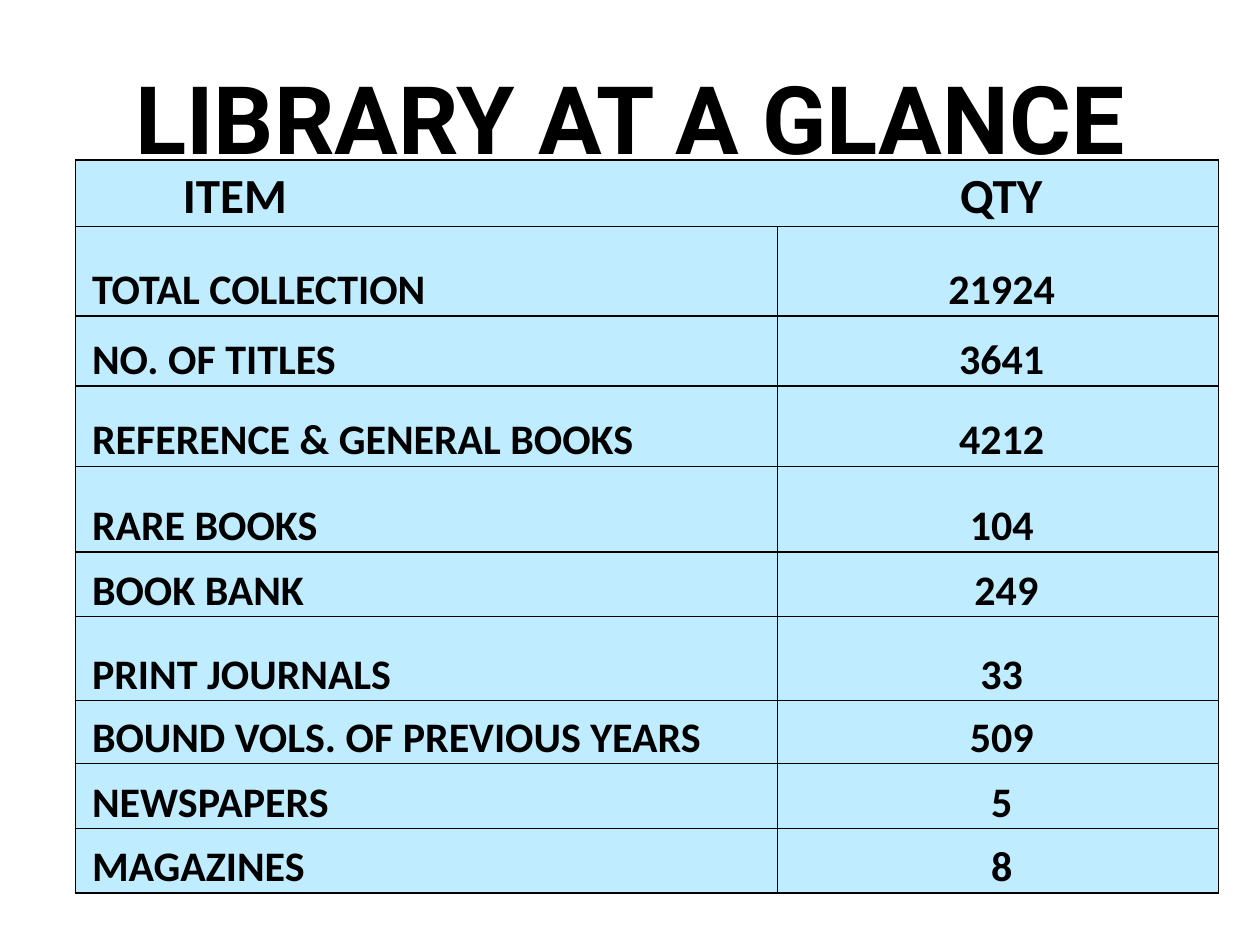
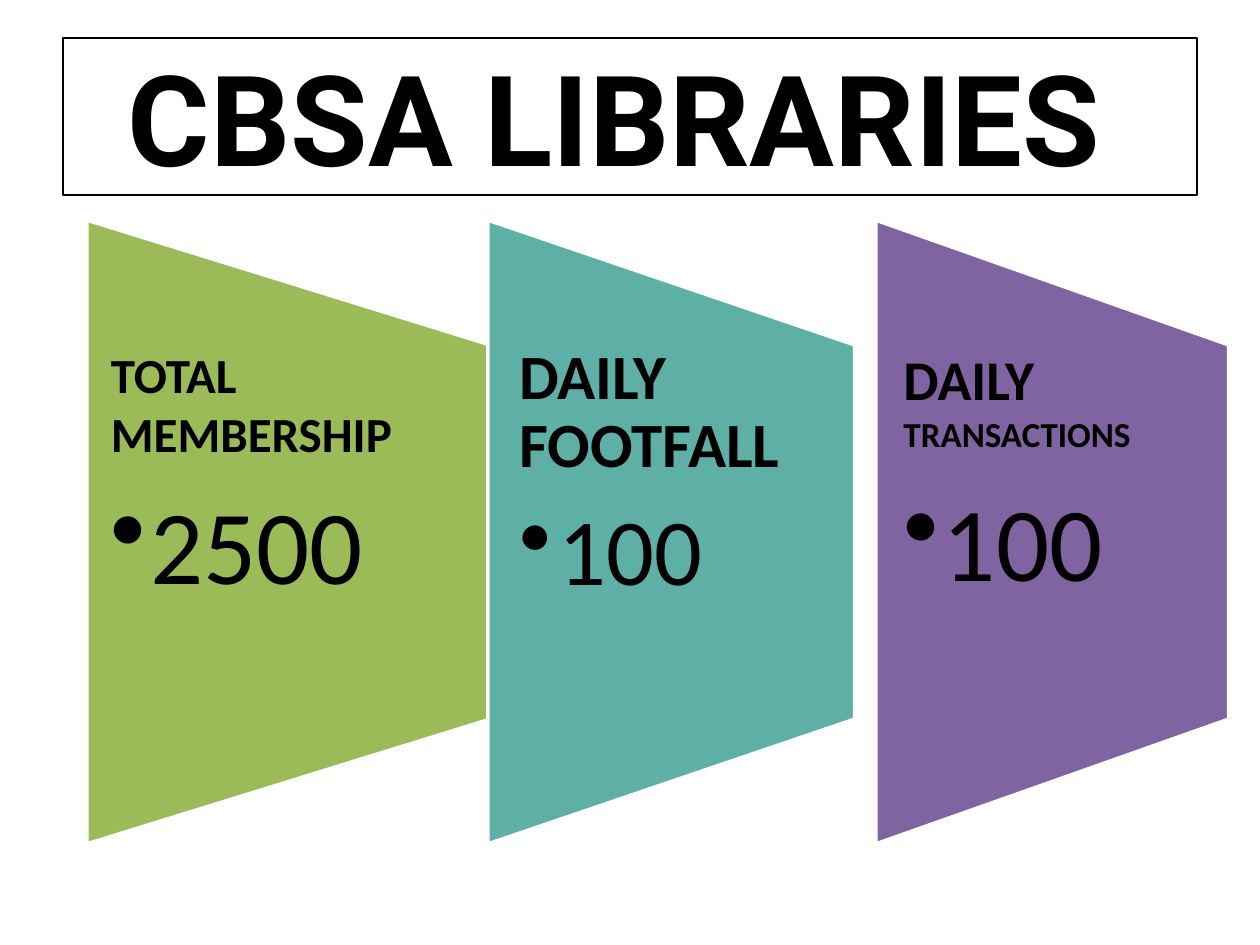
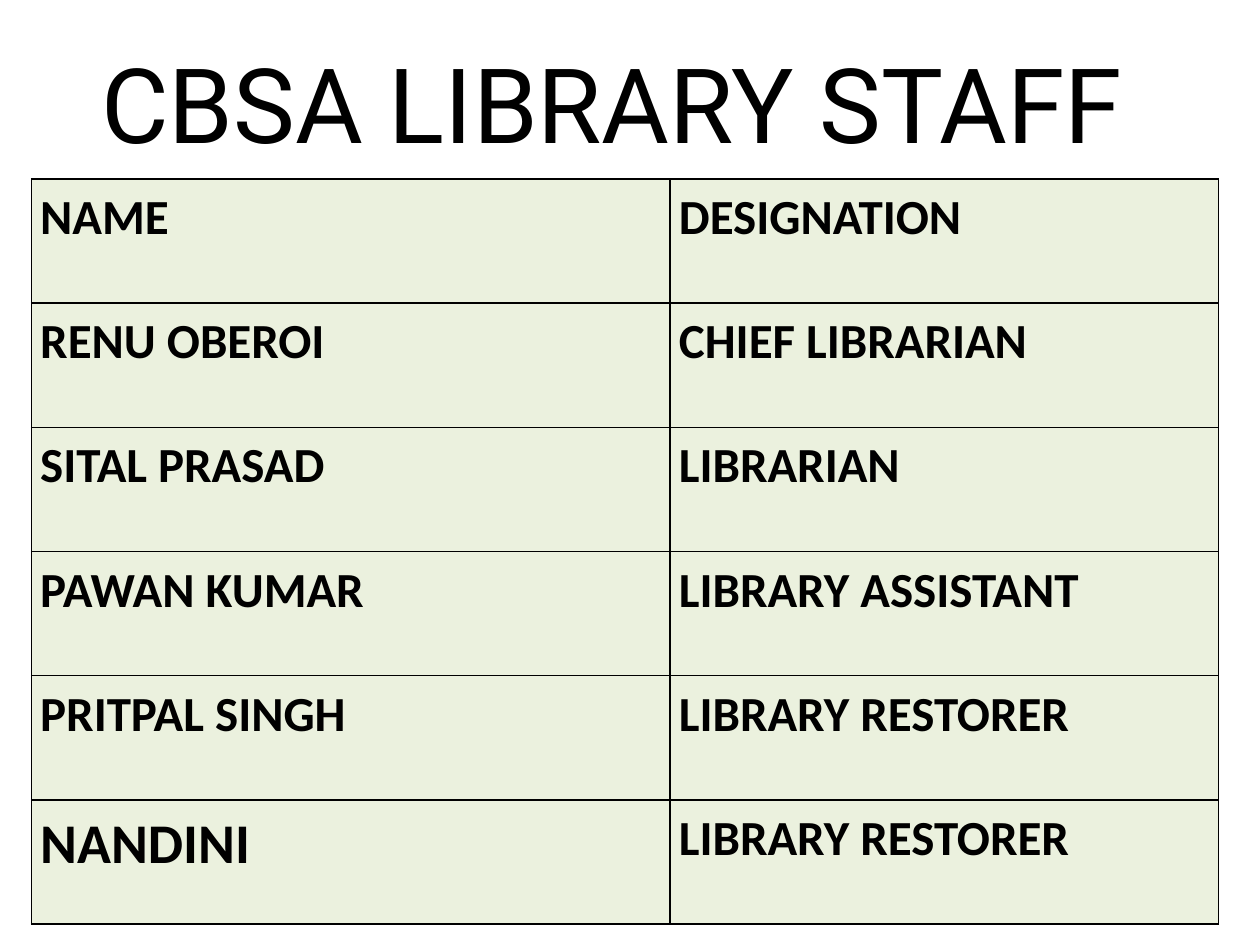
"""Build three slides on the library: holdings, usage and staff."""
from dataclasses import dataclass

from lxml import etree
from pptx import Presentation
from pptx.dml.color import RGBColor
from pptx.enum.shapes import MSO_SHAPE
from pptx.enum.text import MSO_ANCHOR, MSO_AUTO_SIZE, PP_ALIGN
from pptx.oxml.ns import qn
from pptx.util import Pt

TRAPEZOID = MSO_SHAPE.FLOWCHART_MANUAL_OPERATION
TOP, MIDDLE, BOTTOM = MSO_ANCHOR.TOP, MSO_ANCHOR.MIDDLE, MSO_ANCHOR.BOTTOM
LEFT, CENTER = PP_ALIGN.LEFT, PP_ALIGN.CENTER
NO_FIT = MSO_AUTO_SIZE.NONE
TITLE_ONLY = 5


@dataclass(frozen=True)
class Theme:
    """Colours, fonts and type sizes of the deck."""
    title_font: str = "Roboto"
    body_font: str = "Calibri"
    ink: str = "000000"
    paper: str = "FFFFFF"
    sky: str = "C0ECFF"
    sage: str = "EBF1DE"
    green: str = "9BBB59"
    teal: str = "5EAFA6"
    purple: str = "8064A2"
    header: float = 28
    item: float = 24
    emphasis: float = 32


THEME = Theme()

TITLES = {
    "holdings": dict(text="LIBRARY AT A GLANCE", at=(36, 21.6), size=54, bold=True),
    "usage": dict(text="CBSA LIBRARIES ", at=(36, 21.6), size=72, bold=True),
    "staff": dict(text="CBSA LIBRARY STAFF ", at=(33, 13.5), size=59.4, bold=False),
}
TITLE_SIZE = (648, 90)

HOLDINGS_HEADER = "\tITEM\tQTY"
HEADER_TABS = (52, 496)
HOLDINGS = [
    ("TOTAL COLLECTION", "21924"),
    ("NO. OF TITLES", "3641"),
    ("REFERENCE & GENERAL BOOKS", "4212"),
    ("RARE BOOKS", "104"),
    ("BOOK BANK", " 249"),
    ("PRINT JOURNALS", "33"),
    ("BOUND VOLS. OF PREVIOUS YEARS", "509"),
    ("NEWSPAPERS", "5"),
    ("MAGAZINES", "8"),
]
HOLDINGS_GRID = dict(at=(43.2, 91.5), columns=(401, 252),
                     rows=(38, 51, 40, 46, 49, 37, 48, 36, 37, 37))

STAFF = [
    ("NAME", "DESIGNATION"),
    ("RENU OBEROI", "CHIEF LIBRARIAN"),
    ("SITAL PRASAD", "LIBRARIAN"),
    ("PAWAN KUMAR", "LIBRARY ASSISTANT"),
    ("PRITPAL SINGH", "LIBRARY RESTORER"),
    ("NANDINI", "LIBRARY RESTORER"),
]
STAFF_GRID = dict(at=(18, 102.2), columns=(365, 313.2), rows=(71,) * len(STAFF))

PANELS = [
    dict(left=49.7, width=230.4, fill=THEME.green, inset=13.7, spacing=1, after=10,
         label=[("TOTAL MEMBERSHIP", 28)], value=("2500", 60)),
    dict(left=278.8, width=209.5, fill=THEME.teal, inset=18, spacing=0.9, after=13,
         label=[("DAILY FOOTFALL", 36)], value=("100", 54)),
    dict(left=500.5, width=201.6, fill=THEME.purple, inset=15.8, spacing=1, after=13,
         label=[("DAILY ", 32), ("TRANSACTIONS", 20)], value=("100", 60)),
]
PANEL_MIDDLE, PANEL_HEIGHT, PANEL_TEXT_HEIGHT = 304, 356.4, 214
BULLET_INDENT = 22.5
CELL_INSET, HOLDINGS_INSET = 5, 9.4


def assign(target, **values):
    """Set each named attribute on the target."""
    for name, value in values.items():
        setattr(target, name, value)


def style(font, size, bold=True, name=THEME.body_font):
    """Format a font in the ink colour."""
    assign(font, name=name, size=Pt(size), bold=bold)
    font.color.rgb = RGBColor.from_string(THEME.ink)


def paint(item, colour):
    """Fill a shape or a cell with one colour."""
    item.fill.solid()
    item.fill.fore_color.rgb = RGBColor.from_string(colour)


def outline(shape, colour, width):
    """Give a shape a plain line."""
    shape.line.color.rgb = RGBColor.from_string(colour)
    shape.line.width = Pt(width)


def add_page(deck, title):
    """Add a title-only page and format its title."""
    page = deck.slides.add_slide(deck.slide_layouts[TITLE_ONLY])
    box = page.shapes.title
    left, top = title["at"]
    width, height = TITLE_SIZE
    assign(box, left=Pt(left), top=Pt(top), width=Pt(width), height=Pt(height))
    frame = box.text_frame
    frame.text = title["text"]
    assign(frame, auto_size=NO_FIT, word_wrap=True, vertical_anchor=MIDDLE)
    para = frame.paragraphs[0]
    para.alignment = CENTER
    style(para.runs[0].font, title["size"], title["bold"], THEME.title_font)
    return page


def add_borders(cell):
    """Draw a thin ink line on each side of a cell."""
    properties = cell._tc.get_or_add_tcPr()
    for place, side in enumerate(("lnL", "lnR", "lnT", "lnB")):
        line = etree.Element(qn(f"a:{side}"), w=str(Pt(1)))
        fill = etree.SubElement(line, qn("a:solidFill"))
        etree.SubElement(fill, qn("a:srgbClr"), val=THEME.ink)
        properties.insert(place, line)


def add_grid(page, grid, fill, inset, anchor):
    """Add a bordered table of one fill and return it."""
    columns, rows = grid["columns"], grid["rows"]
    box = [Pt(value) for value in (*grid["at"], sum(columns), sum(rows))]
    table = page.shapes.add_table(len(rows), len(columns), *box).table
    assign(table, first_row=False, horz_banding=False)
    for column, width in zip(table.columns, columns):
        column.width = Pt(width)
    for row, height in zip(table.rows, rows):
        row.height = Pt(height)
    for cell in table.iter_cells():
        assign(cell, margin_left=Pt(inset), margin_right=Pt(CELL_INSET),
               margin_top=0, margin_bottom=0, vertical_anchor=anchor)
        paint(cell, fill)
        add_borders(cell)
    return table


def write_cell(cell, text, size, alignment=LEFT, spacing=1, tabs=()):
    """Write one paragraph in a cell, with optional tab stops."""
    cell.text = text
    para = cell.text_frame.paragraphs[0]
    if tabs:
        stops = etree.SubElement(para._p.get_or_add_pPr(), qn("a:tabLst"))
        for stop in tabs:
            etree.SubElement(stops, qn("a:tab"), pos=str(Pt(stop)), algn="l")
    assign(para, alignment=alignment, line_spacing=spacing)
    style(para.runs[0].font, size)


def add_span(para, text, size, bold):
    """Append formatted text to a paragraph."""
    span = para.add_run()
    span.text = text
    style(span.font, size, bold)


def add_panel(page, panel):
    """Add a trapezoid turned on its side, with a label and a bulleted value."""
    left, width = panel["left"], panel["width"]
    middle = left + width / 2
    shape = page.shapes.add_shape(
        TRAPEZOID, Pt(middle - PANEL_HEIGHT / 2), Pt(PANEL_MIDDLE - width / 2),
        Pt(PANEL_HEIGHT), Pt(width))
    shape.rotation = 270
    shape.shadow.inherit = False
    paint(shape, panel["fill"])
    outline(shape, THEME.paper, 2)

    box = page.shapes.add_textbox(
        Pt(left), Pt(PANEL_MIDDLE - PANEL_TEXT_HEIGHT / 2), Pt(width), Pt(PANEL_TEXT_HEIGHT))
    frame = box.text_frame
    assign(frame, word_wrap=True, vertical_anchor=TOP, margin_top=0, margin_bottom=0,
           margin_left=Pt(panel["inset"]), margin_right=Pt(panel["inset"]))
    label = frame.paragraphs[0]
    assign(label, line_spacing=panel["spacing"], space_after=Pt(panel["after"]))
    for text, size in panel["label"]:
        add_span(label, text, size, True)

    value = frame.add_paragraph()
    properties = value._p.get_or_add_pPr()
    properties.set("marL", str(Pt(BULLET_INDENT)))
    properties.set("indent", str(-Pt(BULLET_INDENT)))
    etree.SubElement(properties, qn("a:buChar"), char="•")
    assign(value, level=1, line_spacing=panel["spacing"])
    add_span(value, *panel["value"], False)


def build_holdings(deck):
    """Build the page of holdings."""
    page = add_page(deck, TITLES["holdings"])
    table = add_grid(page, HOLDINGS_GRID, THEME.sky, HOLDINGS_INSET, BOTTOM)
    table.cell(0, 0).merge(table.cell(0, 1))
    write_cell(table.cell(0, 0), HOLDINGS_HEADER, THEME.header, tabs=HEADER_TABS)
    for row, (item, quantity) in enumerate(HOLDINGS, start=1):
        write_cell(table.cell(row, 0), item, THEME.item)
        write_cell(table.cell(row, 1), quantity, THEME.item, CENTER)


def build_usage(deck):
    """Build the page of membership and daily use."""
    page = add_page(deck, TITLES["usage"])
    outline(page.shapes.title, THEME.ink, 1)
    for panel in PANELS:
        add_panel(page, panel)


def build_staff(deck):
    """Build the page of staff."""
    page = add_page(deck, TITLES["staff"])
    table = add_grid(page, STAFF_GRID, THEME.sage, CELL_INSET, TOP)
    for row, person in enumerate(STAFF):
        for column, text in enumerate(person):
            size = THEME.emphasis if text == "NANDINI" else THEME.header
            write_cell(table.cell(row, column), text, size, spacing=1.15)


def main():
    """Build and save the deck."""
    deck = Presentation()
    assign(deck, slide_width=Pt(720), slide_height=Pt(540))
    for build in (build_holdings, build_usage, build_staff):
        build(deck)
    deck.save("out.pptx")


if __name__ == "__main__":
    main()
